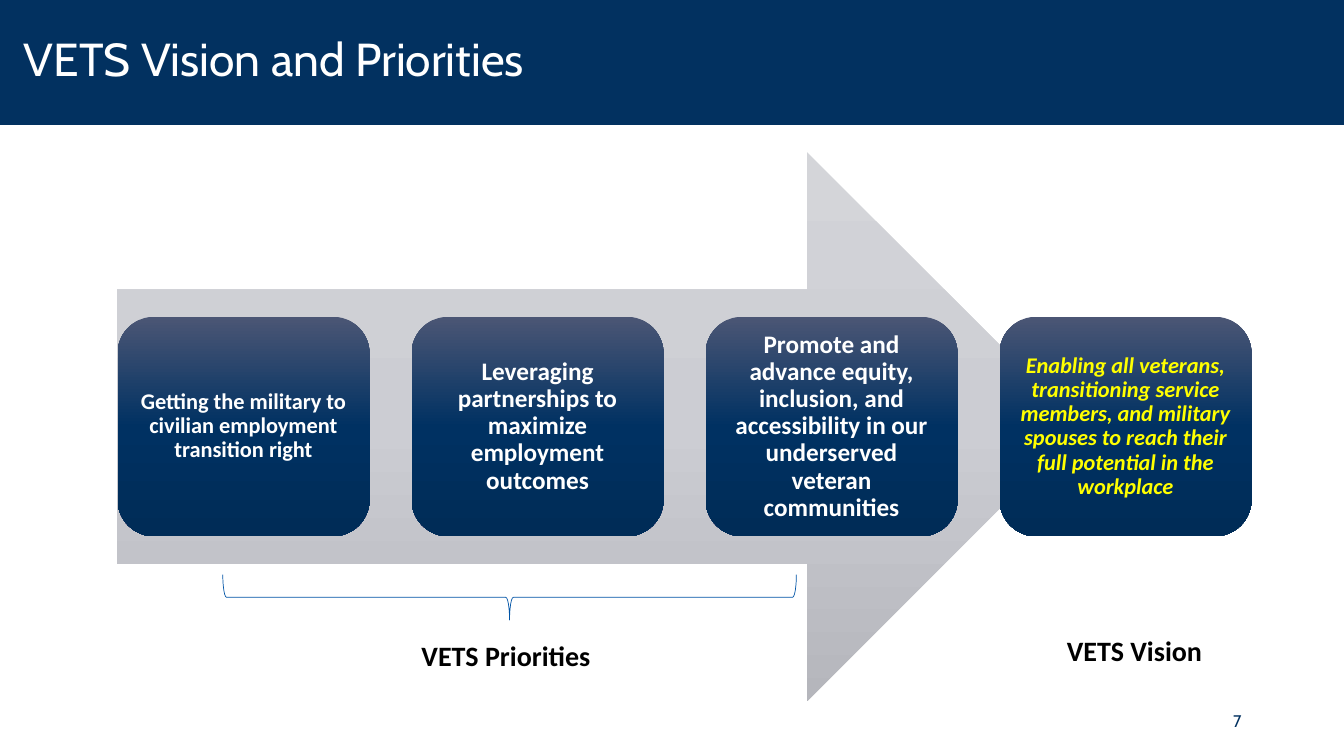
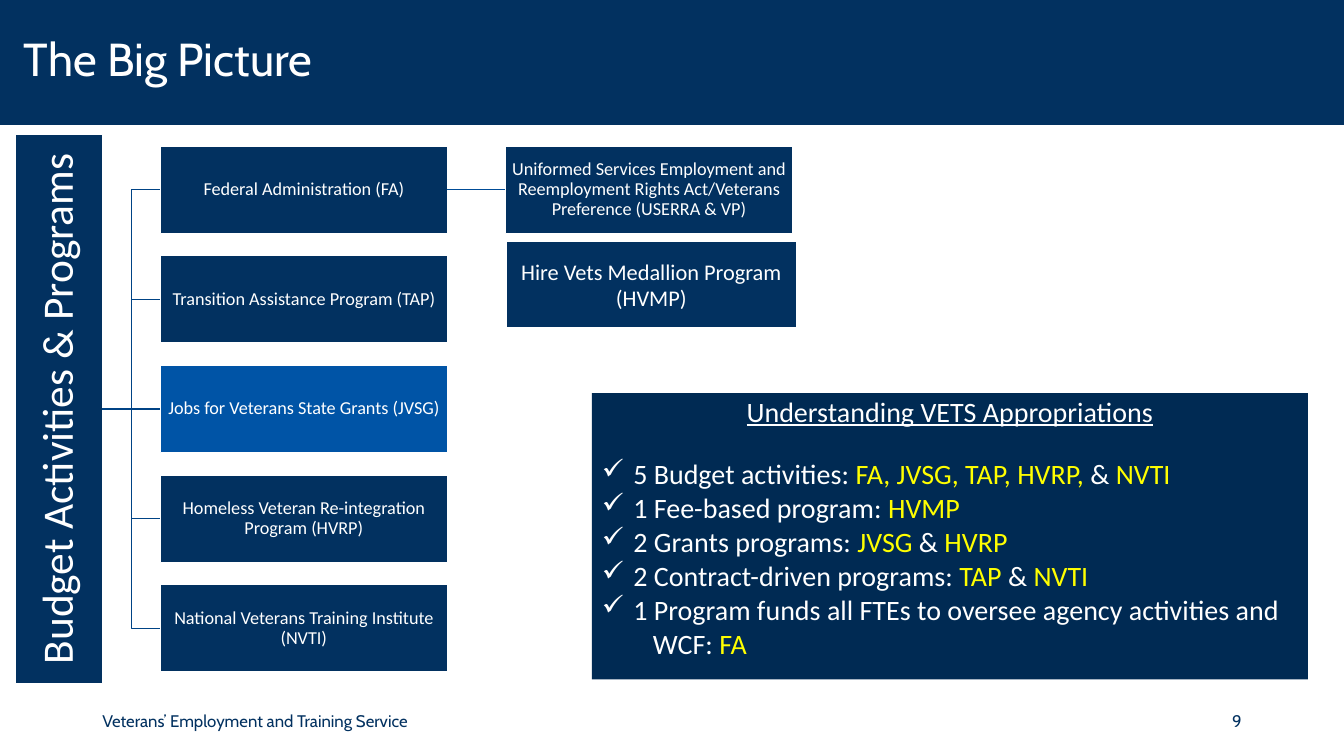
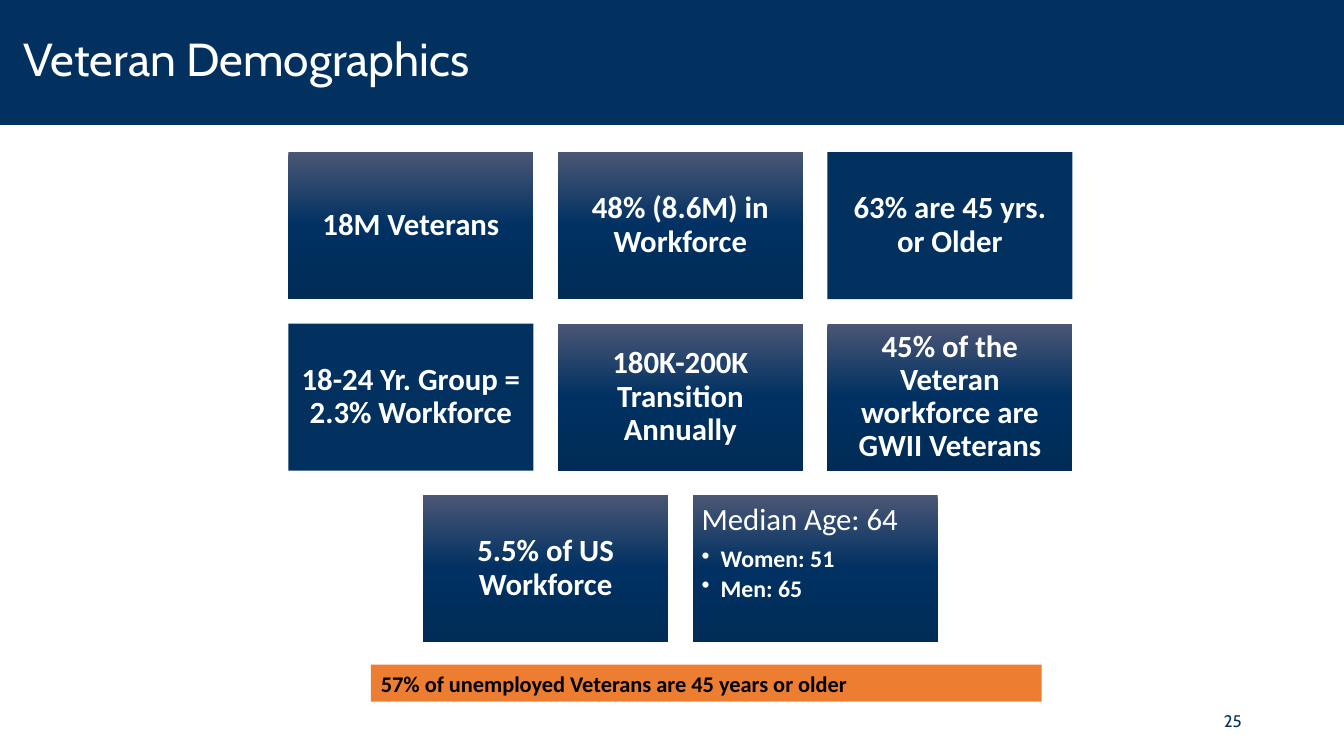
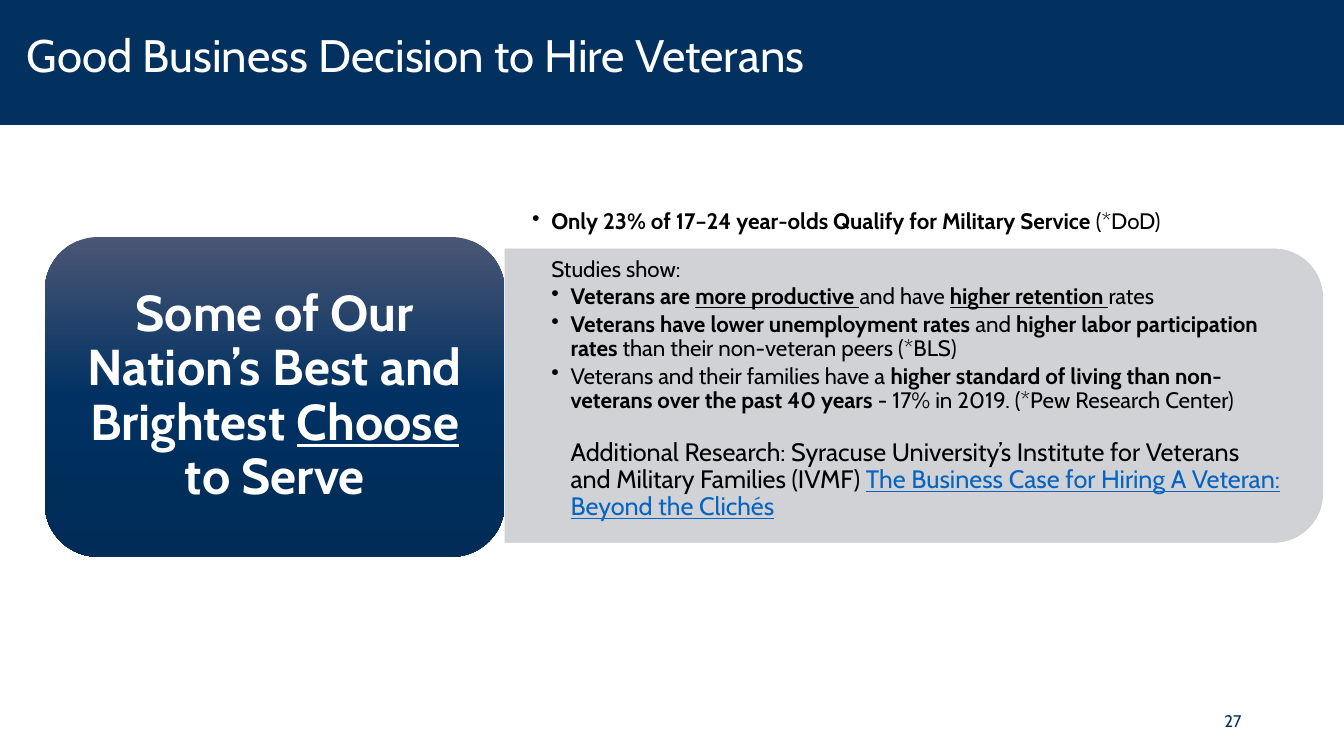
from lxml import etree
from pptx import Presentation
from pptx.dml.color import RGBColor
from pptx.enum.shapes import MSO_CONNECTOR as Link, MSO_SHAPE as Preset
from pptx.enum.text import MSO_ANCHOR as Anchor, PP_ALIGN as Align
from pptx.oxml.ns import qn
from pptx.util import Pt

COLORS = {
    "navy": "023160", "deep": "002A53", "blue": "0054A6", "branch": "004385",
    "side_branch": "004C97", "white": "FFFFFF", "yellow": "FFFF00",
    "black": "000000", "orange": "ED7D31", "panel": "CCCED2", "link": "0563C1",
}
# Top, middle and bottom colours of the vertical gradients
GRADIENTS = {
    "glossy": ("4B5675", "003162", "002C57"),
    "silver": ("D4D5D9", "CCCDD3", "B5B6BC"),
}

# Text formats
TITLE = {"name": "Cabin", "size": 33, "color": "white"}
FOOTER = {"name": "Cabin", "size": 12, "color": "navy"}
BODY = {"name": "Calibri", "size": 20, "color": "white"}
BRANCH = {**BODY, "size": 13}
STRONG = {**BODY, "bold": True}
LABEL = {**STRONG, "color": "black"}
FACT = {**STRONG, "size": 22}
STUDY = {"name": "Cabin", "size": 16, "color": "black"}
SLOGAN = {"name": "Cabin", "size": 36, "color": "white", "bold": True}
YELLOW = {"color": "yellow"}
BOLD = {"bold": True}
KEY = {"bold": True, "underline": True}

# Content: a paragraph is a list of runs, a run is text or (text, format)
VISION_STEPS = [
    ("Getting the military to civilian employment transition right", {"size": 16}),
    ("Leveraging partnerships to maximize employment outcomes", {"size": 18}),
    ("Promote and advance equity, inclusion, and accessibility in our "
     "underserved veteran communities", {"size": 18}),
    ("Enabling all veterans, transitioning service members, and military "
     "spouses to reach their full potential in the workplace",
     {"size": 16, "italic": True, "color": "yellow"}),
]
VISION_LABELS = [("VETS Priorities", 294, 452), ("VETS Vision", 755, 449)]

PROGRAMS = [
    "Federal Administration (FA)",
    "Transition Assistance Program (TAP)",
    "Jobs for Veterans State Grants (JVSG)",
    "Homeless Veteran Re-integration Program (HVRP)",
    "National Veterans Training Institute (NVTI)",
]
MAIN_PROGRAM = 2
RIGHTS_PROGRAM = ("Uniformed Services Employment and Reemployment Rights "
                  "Act/Veterans Preference (USERRA & VP)")
CHECK = {"bullet": "✓", "margin": 22.5, "hang": 22.5, "after": 2.6}
APPROPRIATIONS = [
    ([("Understanding VETS Appropriations", {"underline": True})],
     {"align": Align.CENTER, "after": 23}),
    (["5 Budget activities: ", ("FA, JVSG, TAP, HVRP, ", YELLOW), "& ",
      ("NVTI", YELLOW)], CHECK),
    (["1 Fee-based program: ", ("HVMP", YELLOW)], CHECK),
    (["2 Grants programs: ", ("JVSG", YELLOW), " & ", ("HVRP", YELLOW)], CHECK),
    (["2 Contract-driven programs: ", ("TAP", YELLOW), " & ", ("NVTI", YELLOW)],
     CHECK),
    (["1 Program funds all FTEs to oversee agency activities and"], CHECK),
    (["WCF: ", ("FA", YELLOW)], {"margin": 36.5}),
]

FACT_ROWS = [
    [("18M Veterans", "glossy"), ("48% (8.6M) in Workforce", "glossy"),
     ("63% are 45 yrs. or Older", "navy")],
    [("18-24 Yr. Group = 2.3% Workforce", "navy"),
     ("180K-200K Transition Annually", "glossy"),
     ("45% of the Veteran workforce are GWII Veterans", "glossy")],
    [("5.5% of US Workforce", "glossy"), (None, "glossy")],
]
AGE_BULLET = {"bullet": "•", "margin": 13.5, "hang": 13.5, "after": 2.6}
MEDIAN_AGE = [
    ([("Median Age: 64", {"bold": False})], {"after": 7}),
    ([("Women: 51", {"size": 17})], AGE_BULLET),
    ([("Men: 65", {"size": 17})], AGE_BULLET),
]

POINT = {"bullet": "•", "margin": 27.4, "hang": 13.7, "after": 2.4}
STUDIES = [
    ([("Only 23% of 17–24 year-olds Qualify for Military Service ", BOLD),
      "(*DoD)"], {**POINT, "margin": 13.7, "after": 17}),
    (["Studies show:"], {"margin": 13.7, "after": 2.4}),
    ([("Veterans are ", BOLD), ("more productive ", KEY), "and have ",
      ("higher retention ", KEY), "rates"], POINT),
    ([("Veterans have lower unemployment rates ", BOLD), "and ",
      ("higher labor participation rates ", BOLD),
      "than their non-veteran peers (*BLS)"], POINT),
    (["Veterans and their families have a ",
      ("higher standard of living than non-veterans over the past 40 years ", BOLD),
      "- 17% in 2019. (*Pew Research Center)"], {**POINT, "after": 19}),
    ([("Additional Research: Syracuse University’s Institute for Veterans and "
       "Military Families (IVMF) ", {"size": 18}),
      ("The Business Case for Hiring A Veteran: Beyond the Clichés",
       {"size": 18, "color": "link", "underline": True})], {"margin": 27.4}),
]
SLOGAN_RUNS = ["Some of Our Nation’s Best and Brightest ",
               ("Choose", {"underline": True}), " to Serve"]


def rgb(color):
    return RGBColor.from_string(COLORS[color])


def write(shape, paragraphs, base, align=Align.LEFT, anchor=Anchor.MIDDLE,
          inset=(7.2, 3.6), spacing=0.9):
    """Fill a shape with (runs, layout) paragraphs; inset is (sides, ends)."""
    frame = shape.text_frame
    frame.word_wrap = True
    frame.vertical_anchor = anchor
    frame.margin_left = frame.margin_right = Pt(inset[0])
    frame.margin_top = frame.margin_bottom = Pt(inset[1])
    for index, (runs, layout) in enumerate(paragraphs):
        paragraph = frame.add_paragraph() if index else frame.paragraphs[0]
        properties = paragraph._p.get_or_add_pPr()
        margin, hang = layout.get("margin", 0), layout.get("hang", 0)
        properties.set("marL", str(Pt(margin)))
        properties.set("indent", str(Pt(-hang)))
        if "bullet" in layout:
            bullet = etree.SubElement(properties, qn("a:buChar"))
            bullet.set("char", layout["bullet"])
        paragraph.alignment = layout.get("align", align)
        paragraph.line_spacing = spacing
        paragraph.space_after = Pt(layout.get("after", 0))
        for item in runs:
            text, changes = (item, {}) if isinstance(item, str) else item
            run = paragraph.add_run()
            run.text = text
            for name, value in {**base, **changes}.items():
                if name == "color":
                    run.font.color.rgb = rgb(value)
                else:
                    setattr(run.font, name, Pt(value) if name == "size" else value)


def plain(*runs):
    return [(runs, {})]


def add_text(slide, box, paragraphs, base, **options):
    write(slide.shapes.add_textbox(*map(Pt, box)), paragraphs, base, **options)


def set_gradient(shape, stops):
    shape.fill.gradient()
    shape.fill.gradient_angle = 270
    stop_list = shape._element.spPr.find(qn("a:gradFill")).find(qn("a:gsLst"))
    for old_stop in list(stop_list):
        stop_list.remove(old_stop)
    for index, color in enumerate(stops):
        stop = etree.SubElement(stop_list, qn("a:gs"), pos=str(index * 50000))
        etree.SubElement(stop, qn("a:srgbClr"), val=color)


def add_block(slide, preset, box, fill=None, line=None, rotation=0):
    shape = slide.shapes.add_shape(preset, *map(Pt, box))
    shape.shadow.inherit = False
    shape.rotation = rotation
    if fill in GRADIENTS:
        set_gradient(shape, GRADIENTS[fill])
    elif fill:
        shape.fill.solid()
        shape.fill.fore_color.rgb = rgb(fill)
    else:
        shape.fill.background()
    if line:
        shape.line.color.rgb = rgb(line[0])
        shape.line.width = Pt(line[1])
    else:
        shape.line.fill.background()
    return shape


def join(slide, start, end, kind, color):
    """Link the right side of one box to the left side of another."""
    connector = slide.shapes.add_connector(kind, 0, 0, 0, 0)
    connector.begin_connect(start, 3)
    connector.end_connect(end, 1)
    connector.line.color.rgb = rgb(color)
    connector.line.width = Pt(1)
    etree.SubElement(connector._element.spPr, qn("a:effectLst"))


def add_page(presentation, title, number, footer=None,
             title_box=(10, 5, 762, 78), title_size=33):
    slide = presentation.slides.add_slide(presentation.slide_layouts[6])
    add_block(slide, Preset.RECTANGLE, (0, 0, 960, 89.3), "navy")
    add_text(slide, title_box, plain(title), {**TITLE, "size": title_size})
    if footer:
        add_text(slide, (66, 500.5, 576, 29), plain(footer), FOOTER, spacing=1)
    add_text(slide, (846, 500.5, 48, 29), plain(str(number)), FOOTER,
             align=Align.RIGHT, spacing=1)
    return slide


def build_vision(presentation):
    slide = add_page(presentation, "VETS Vision and Priorities", 7)
    add_block(slide, Preset.RIGHT_ARROW, (83.5, 108.7, 689, 392), "silver")
    width, gap = 180, 30
    for index, step in enumerate(VISION_STEPS):
        box = (84 + index * (width + gap), 226.3, width, 156.8)
        shape = add_block(slide, Preset.ROUNDED_RECTANGLE, box, "glossy")
        write(shape, plain(step), STRONG, align=Align.CENTER, inset=(5, 5))
    add_block(slide, Preset.LEFT_BRACE, (347.8, 221.8, 32.4, 409.7),
              line=("blue", 0.5), rotation=270)
    for text, left, top in VISION_LABELS:
        add_text(slide, (left, top, 141, 31.5), plain(text), LABEL, spacing=1)


def build_big_picture(presentation):
    slide = add_page(presentation, "The Big Picture", 9,
                     "Veterans’ Employment and Training Service")
    top, step, width, height = 104.2, 78.35, 205, 62.5
    outline = ("white", 1)

    def add_program(text, left, row, fill="navy"):
        box = (left, top + row * step, width, height)
        shape = add_block(slide, Preset.RECTANGLE, box, fill, outline)
        write(shape, plain(text), BRANCH, align=Align.CENTER, inset=(0.7, 0.7))
        return shape

    # Vertical bar, centred on the middle program
    bar_height = 392
    bar_top = top + MAIN_PROGRAM * step + (height - bar_height) / 2
    bar = add_block(slide, Preset.RECTANGLE, (10.7, bar_top, height, bar_height),
                    "navy", outline)
    write(bar, plain("Budget Activities & Programs"), {**BODY, "size": 31},
          align=Align.CENTER, inset=(1.4, 1.4))
    bar.text_frame._txBody.bodyPr.set("vert", "vert270")

    # Programs and their branches
    programs = []
    for row, text in enumerate(PROGRAMS):
        main = row == MAIN_PROGRAM
        programs.append(add_program(text, 114.5, row, "blue" if main else "navy"))
        join(slide, bar, programs[-1], Link.STRAIGHT if main else Link.ELBOW,
             "branch")
    rights = add_program(RIGHTS_PROGRAM, 361, 0)
    join(slide, programs[0], rights, Link.STRAIGHT, "side_branch")
    medallion = add_block(slide, Preset.RECTANGLE, (361.5, 172.2, 207.5, 62),
                          "navy", outline)
    write(medallion, plain("Hire Vets Medallion Program (HVMP)"),
          {**BODY, "size": 16}, align=Align.CENTER, inset=(1.5, 1.5), spacing=1)

    summary = add_block(slide, Preset.RECTANGLE, (422.8, 280.8, 511.4, 204.5), "deep")
    write(summary, APPROPRIATIONS, BODY, anchor=Anchor.TOP)


def build_demographics(presentation):
    slide = add_page(presentation, "Veteran Demographics", 25)
    width, height, gap, center = 175, 105, 17.5, 486
    for row, facts in enumerate(FACT_ROWS):
        row_width = len(facts) * (width + gap) - gap
        for column, (text, fill) in enumerate(facts):
            box = (center - row_width / 2 + column * (width + gap),
                   108.7 + row * (height + gap), width, height)
            shape = add_block(slide, Preset.RECTANGLE, box, fill)
            if text:
                write(shape, plain(text), FACT, align=Align.CENTER, inset=(8, 6.5))
            else:
                write(shape, MEDIAN_AGE, FACT, anchor=Anchor.TOP, inset=(6.5, 6.5))
    banner = add_block(slide, Preset.RECTANGLE, (265, 474.7, 479, 26.6), "orange")
    write(banner, plain("57% of unemployed Veterans are 45 years or older"),
          {**LABEL, "size": 16}, spacing=1)


def build_hiring(presentation):
    slide = add_page(presentation, "Good Business Decision to Hire Veterans", 27,
                     title_box=(12, 0, 825, 83), title_size=32.5)
    panel = add_block(slide, Preset.ROUND_2_SAME_RECTANGLE, (548, -9.4, 209.5, 584),
                      "panel", ("panel", 0.5), rotation=90)
    panel_color = panel._element.spPr.find(qn("a:solidFill"))[0]
    etree.SubElement(panel_color, qn("a:alpha"), val="90000")
    add_text(slide, (360.7, 150, 574, 228), STUDIES, STUDY,
             anchor=Anchor.TOP, inset=(19.4, 0))
    slogan = add_block(slide, Preset.ROUNDED_RECTANGLE, (32, 169.3, 328.5, 228.4),
                       "glossy")
    write(slogan, plain(*SLOGAN_RUNS), SLOGAN, align=Align.CENTER, inset=(10.8, 5.4))


def main():
    presentation = Presentation()
    presentation.slide_width, presentation.slide_height = Pt(960), Pt(540)
    for build in (build_vision, build_big_picture, build_demographics, build_hiring):
        build(presentation)
    presentation.save("out.pptx")


if __name__ == "__main__":
    main()
